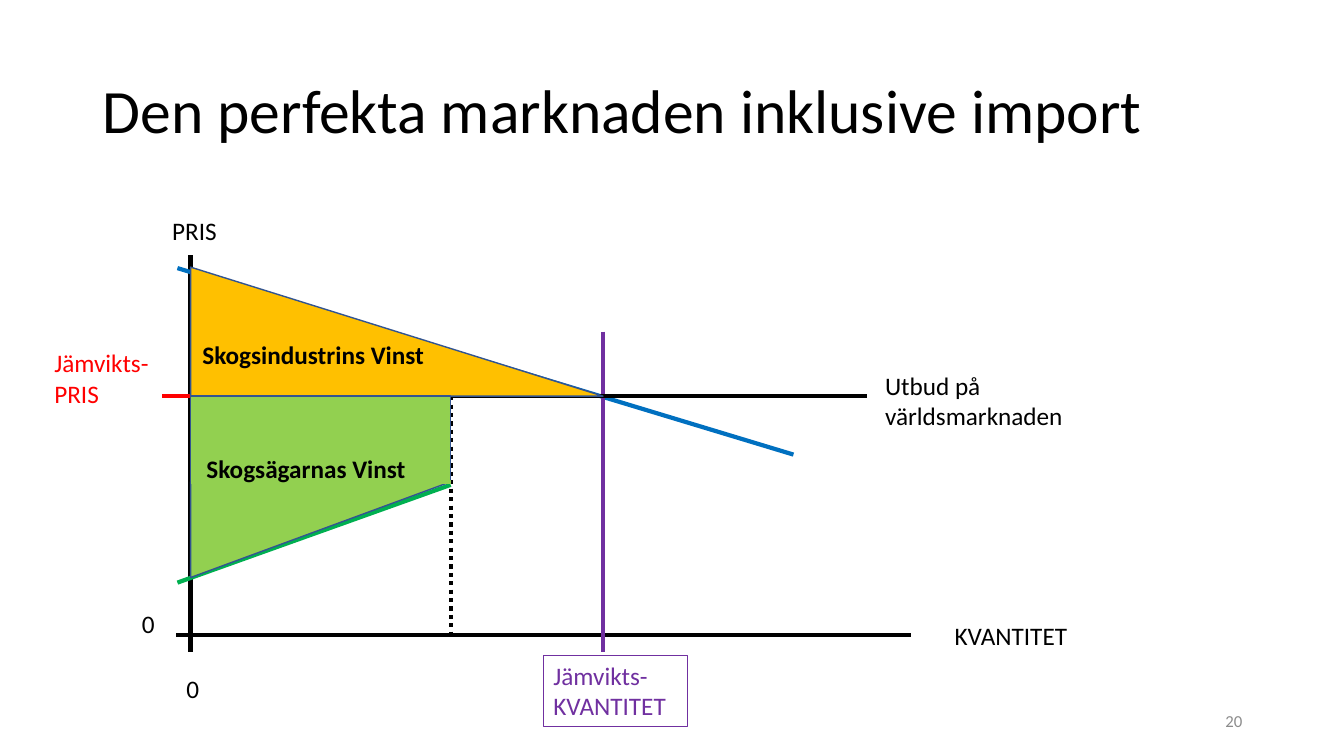
from dataclasses import dataclass
from typing import Optional

from pptx import Presentation
from pptx.dml.color import RGBColor
from pptx.enum.dml import MSO_LINE
from pptx.enum.shapes import MSO_CONNECTOR, MSO_SHAPE
from pptx.enum.text import MSO_ANCHOR, MSO_AUTO_SIZE, PP_ALIGN
from pptx.oxml.ns import qn
from pptx.util import Inches, Pt
from lxml import etree

STRAIGHT = MSO_CONNECTOR.STRAIGHT
TRIANGLE = MSO_SHAPE.ISOSCELES_TRIANGLE
RECTANGLE = MSO_SHAPE.RECTANGLE
DOTTED = MSO_LINE.ROUND_DOT
LEFT, RIGHT = PP_ALIGN.LEFT, PP_ALIGN.RIGHT
TOP, MIDDLE = MSO_ANCHOR.TOP, MSO_ANCHOR.MIDDLE
FIT_SHAPE, NO_FIT = MSO_AUTO_SIZE.SHAPE_TO_FIT_TEXT, MSO_AUTO_SIZE.NONE

FONT = "Calibri"
BLACK = RGBColor(0x00, 0x00, 0x00)
GRAY = RGBColor(0x8C, 0x8C, 0x8C)
RED = RGBColor(0xFF, 0x00, 0x00)
PURPLE = RGBColor(0x70, 0x30, 0xA0)
SUPPLY_GREEN = RGBColor(0x00, 0xB0, 0x50)
DEMAND_BLUE = RGBColor(0x00, 0x70, 0xC0)
OWNER_GREEN = RGBColor(0x92, 0xD0, 0x50)
INDUSTRY_ORANGE = RGBColor(0xFF, 0xC0, 0x00)
OUTLINE = RGBColor(0x32, 0x54, 0x91)

PRICE_AXIS_X, QUANTITY_AXIS_Y = 1.89, 6.3
DOMESTIC_X, EQUILIBRIUM_X = 4.47, 5.98
DEMAND_TOP_Y, PRICE_Y, OWNER_Y, SUPPLY_Y = 2.65, 3.93, 4.78, 5.73
AXIS_END_Y = 6.47


@dataclass
class Line:
    x1: float
    y1: float
    x2: float
    y2: float
    color: RGBColor = BLACK
    dash: Optional[MSO_LINE] = None


@dataclass
class Area:
    kind: MSO_SHAPE
    right: float
    top: float
    bottom: float
    fill: RGBColor
    flipped: bool = False


@dataclass
class Label:
    text: str
    left: float
    top: float
    width: float
    height: float = 0.4
    color: RGBColor = BLACK
    wrap: bool = True
    bold: bool = False
    size: int = 18
    align: PP_ALIGN = LEFT
    anchor: MSO_ANCHOR = TOP
    border: Optional[RGBColor] = None


AXES = [
    Line(PRICE_AXIS_X, 2.53, PRICE_AXIS_X, AXIS_END_Y),
    Line(1.75, QUANTITY_AXIS_Y, 9.04, QUANTITY_AXIS_Y),
    Label("PRIS", 1.61, 2.09, 0.65, wrap=False),
    Label("KVANTITET", 9.37, 6.1, 1.33, wrap=False),
    Label("0", 1.75, 6.63, 0.33, wrap=False),
    Label("0", 1.31, 5.99, 0.34),
]
CURVES = [
    Line(1.76, 5.78, DOMESTIC_X, 4.81, SUPPLY_GREEN),
    Line(1.76, 2.66, 7.87, 4.51, DEMAND_BLUE),
    Line(1.61, PRICE_Y, 8.49, PRICE_Y, RED),
    Line(EQUILIBRIUM_X, 3.29, EQUILIBRIUM_X, AXIS_END_Y, PURPLE),
    Label("Jämvikts-PRIS", 0.44, 3.4, 1.2, 0.71, RED),
    Label("Jämvikts-KVANTITET", 5.39, 6.5, 1.43, 0.71, PURPLE, border=PURPLE),
    Line(DOMESTIC_X, PRICE_Y, DOMESTIC_X, QUANTITY_AXIS_Y, dash=DOTTED),
    Line(DOMESTIC_X, PRICE_Y, 8.6, PRICE_Y),
    Label("Utbud på\nvärldsmarknaden", 8.68, 3.62, 1.98, 0.71, wrap=False),
]
PROFITS = [
    Area(TRIANGLE, EQUILIBRIUM_X, DEMAND_TOP_Y, PRICE_Y, INDUSTRY_ORANGE),
    Area(RECTANGLE, DOMESTIC_X, PRICE_Y, OWNER_Y, OWNER_GREEN),
    Area(TRIANGLE, DOMESTIC_X, OWNER_Y, SUPPLY_Y, OWNER_GREEN, flipped=True),
    Line(PRICE_AXIS_X, OWNER_Y, DOMESTIC_X, OWNER_Y, OWNER_GREEN),
    Label("Skogsindustrins Vinst", 1.91, 3.32, 2.73, bold=True),
    Label("Skogsägarnas Vinst", 1.95, 4.45, 2.5, bold=True),
]
SLIDE_NUMBER = Label("20", 9.42, 6.95, 3, color=GRAY, size=12,
                     align=RIGHT, anchor=MIDDLE)


def add_run(p, text: str, size: int, color: RGBColor, bold: bool = False) -> None:
    r = p.add_run()
    r.text = text
    r.font.name = FONT
    r.font.size = Pt(size)
    r.font.bold = bold
    r.font.color.rgb = color


def draw_line(s, line: Line) -> None:
    ends = (Inches(v) for v in (line.x1, line.y1, line.x2, line.y2))
    c = s.shapes.add_connector(STRAIGHT, *ends)
    c.line.color.rgb = line.color
    c.line.width = Pt(3)
    if line.dash is not None:
        c.line.dash_style = line.dash
    etree.SubElement(c.element.spPr, qn("a:effectLst"))


def draw_area(s, area: Area) -> None:
    sp = s.shapes.add_shape(
        area.kind, Inches(PRICE_AXIS_X), Inches(area.top),
        Inches(area.right - PRICE_AXIS_X), Inches(area.bottom - area.top))
    sp.shadow.inherit = False
    sp.fill.solid()
    sp.fill.fore_color.rgb = area.fill
    sp.line.color.rgb = OUTLINE
    sp.line.width = Pt(1)
    if area.kind == TRIANGLE:
        sp.adjustments[0] = 0
    if area.flipped:
        sp.element.spPr.find(qn("a:xfrm")).set("flipV", "1")


def draw_label(s, label: Label) -> None:
    sp = s.shapes.add_textbox(Inches(label.left), Inches(label.top),
                              Inches(label.width), Inches(label.height))
    if label.border is not None:
        sp.line.color.rgb = label.border
        sp.line.width = Pt(0.75)
    tf = sp.text_frame
    tf.word_wrap = label.wrap
    tf.auto_size = FIT_SHAPE if label.anchor == TOP else NO_FIT
    tf.vertical_anchor = label.anchor
    for i, text in enumerate(label.text.split("\n")):
        p = tf.add_paragraph() if i else tf.paragraphs[0]
        p.alignment = label.align
        add_run(p, text, label.size, label.color, label.bold)


def draw_title(s, text: str) -> None:
    title = s.shapes.title
    title.left, title.top = Inches(0.92), Inches(0.4)
    title.width, title.height = Inches(11.5), Inches(1.45)
    tf = title.text_frame
    tf.word_wrap = True
    tf.auto_size = NO_FIT
    tf.vertical_anchor = MIDDLE
    p = tf.paragraphs[0]
    p.alignment = LEFT
    p.line_spacing = 0.9
    add_run(p, text, 44, BLACK)


def main() -> None:
    prs = Presentation()
    prs.slide_width, prs.slide_height = Inches(13.33), Inches(7.5)
    s = prs.slides.add_slide(prs.slide_layouts[5])
    draw_title(s, "Den perfekta marknaden inklusive import")
    draw = {Line: draw_line, Area: draw_area, Label: draw_label}
    for item in [SLIDE_NUMBER, *AXES, *CURVES, *PROFITS]:
        draw[type(item)](s, item)
    prs.save("out.pptx")


if __name__ == "__main__":
    main()
